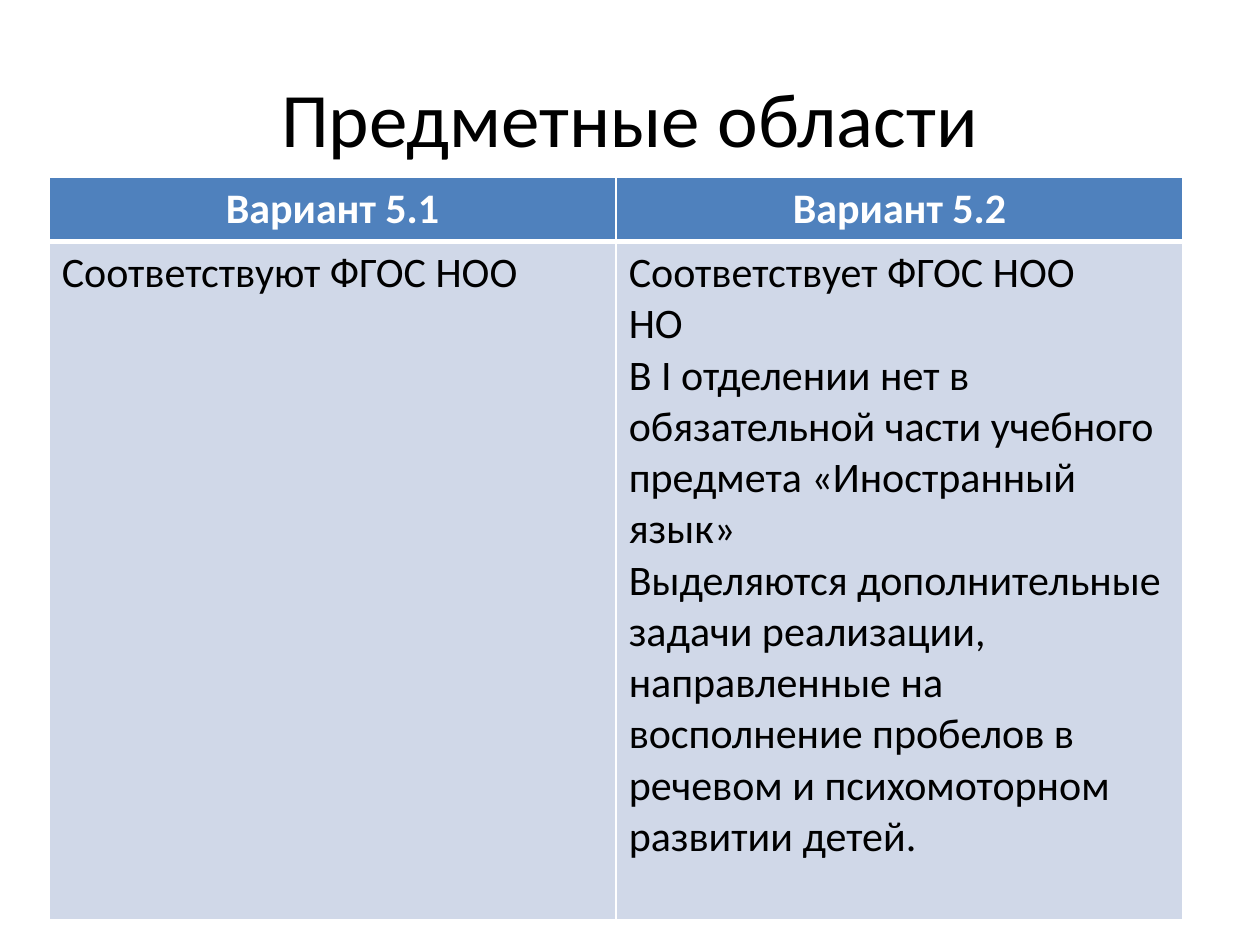
import pptx
import pptx.util
import pptx.dml.color
import pptx.enum.text
import pptx.oxml
import pptx.oxml.ns
from pptx.util import Inches

COLORS = {"text": "000000", "white": "FFFFFF", "header": "4F81BD", "body": "D0D8E8"}
FONT = "Calibri"
ALIGN = pptx.enum.text.PP_ALIGN
HEADERS = ["Вариант 5.1", "Вариант 5.2"]
BODY = [
    ["Соответствуют ФГОС НОО"],
    [
        "Соответствует ФГОС НОО",
        "НО",
        "В I отделении нет в обязательной части учебного предмета «Иностранный язык»",
        "Выделяются дополнительные задачи реализации, направленные на "
        "восполнение пробелов в речевом и психомоторном развитии детей.",
    ],
]


def rgb(name):
    return pptx.dml.color.RGBColor.from_string(COLORS[name])


def format_paragraph(p, size, color, align, bold=False):
    p.alignment = align
    p.font.name = FONT
    p.font.size = pptx.util.Pt(size)
    p.font.bold = bold
    p.font.color.rgb = rgb(color)


def set_borders(cell, widths):
    tc_pr = cell._tc.get_or_add_tcPr()
    for i, (side, width) in enumerate(zip("LRTB", widths)):
        line = pptx.oxml.parse_xml(
            f'<a:ln{side} {pptx.oxml.ns.nsdecls("a")} w="{pptx.util.Pt(width)}">'
            f'<a:solidFill><a:srgbClr val="{COLORS["white"]}"/></a:solidFill></a:ln{side}>'
        )
        tc_pr.insert(i, line)


def fill_cell(cell, lines, fill, color, align, bold, borders):
    cell.fill.solid()
    cell.fill.fore_color.rgb = rgb(fill)
    cell.text = "\n".join(lines)
    for p in cell.text_frame.paragraphs:
        format_paragraph(p, 24, color, align, bold)
    set_borders(cell, borders)


def add_title(slide, left, top, width, height):
    sp = slide.shapes.title
    sp.left, sp.top, sp.width, sp.height = left, top, width, height
    tf = sp.text_frame
    tf.text = "Предметные области"
    tf.vertical_anchor = pptx.enum.text.MSO_ANCHOR.MIDDLE
    format_paragraph(tf.paragraphs[0], 44, "text", ALIGN.CENTER)


def add_variants_table(slide, left, top, width, height):
    table = slide.shapes.add_table(2, len(HEADERS), left, top, width, height).table
    table.rows[0].height = Inches(0.5)
    table.rows[1].height = height - Inches(0.5)
    for i, (header, lines) in enumerate(zip(HEADERS, BODY)):
        fill_cell(table.cell(0, i), [header], "header", "white", ALIGN.CENTER, True, (1, 1, 1, 3))
        fill_cell(table.cell(1, i), lines, "body", "text", ALIGN.LEFT, False, (1, 1, 3, 1))


def main():
    prs = pptx.Presentation()
    prs.slide_width, prs.slide_height = Inches(10), Inches(7.5)
    slide = prs.slides.add_slide(prs.slide_layouts.get_by_name("Title Only"))
    add_title(slide, Inches(0.5), Inches(0.3), Inches(9), Inches(1.25))
    add_variants_table(slide, Inches(0.39), Inches(1.41), Inches(9), Inches(5.88))
    prs.save("out.pptx")


if __name__ == "__main__":
    main()
